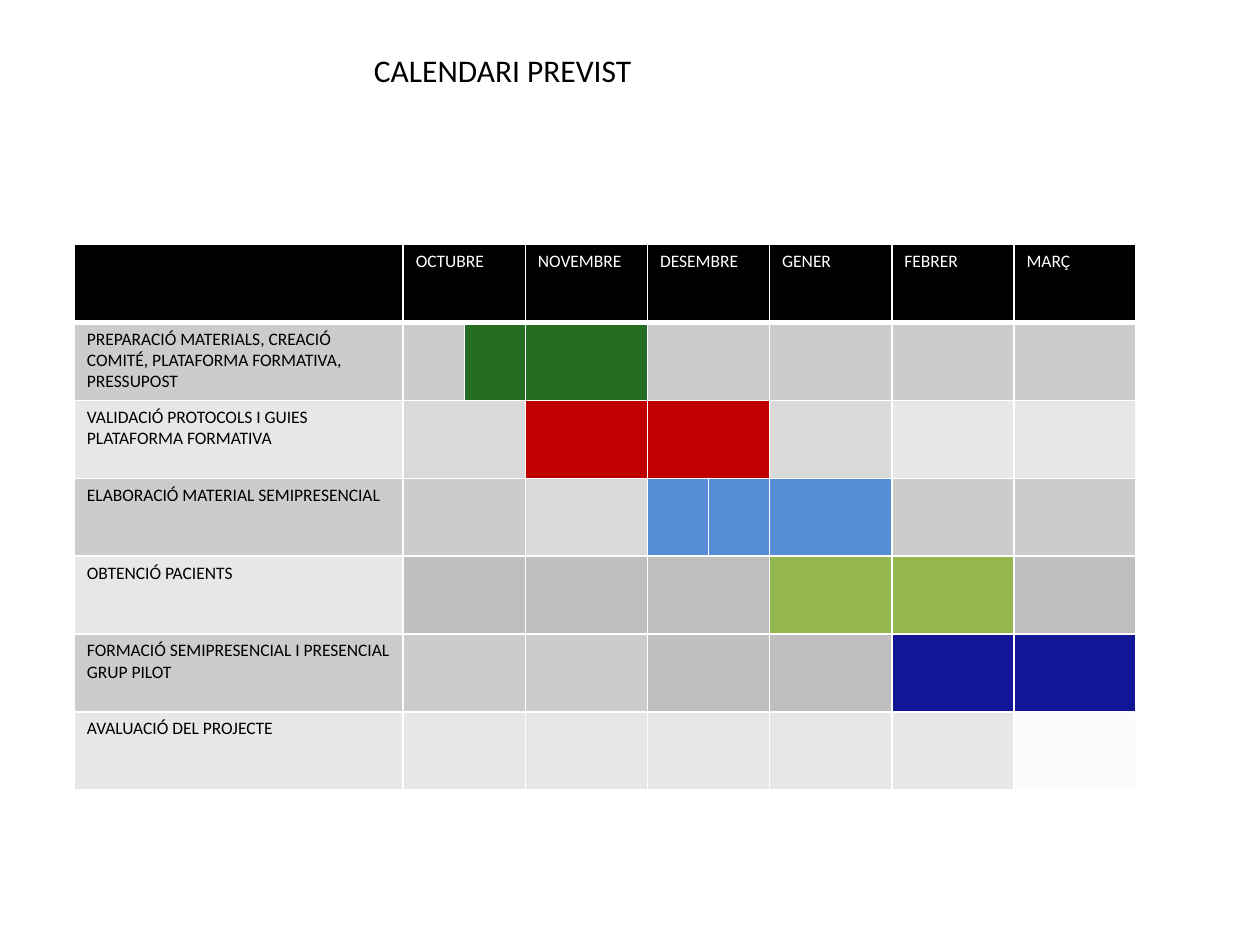
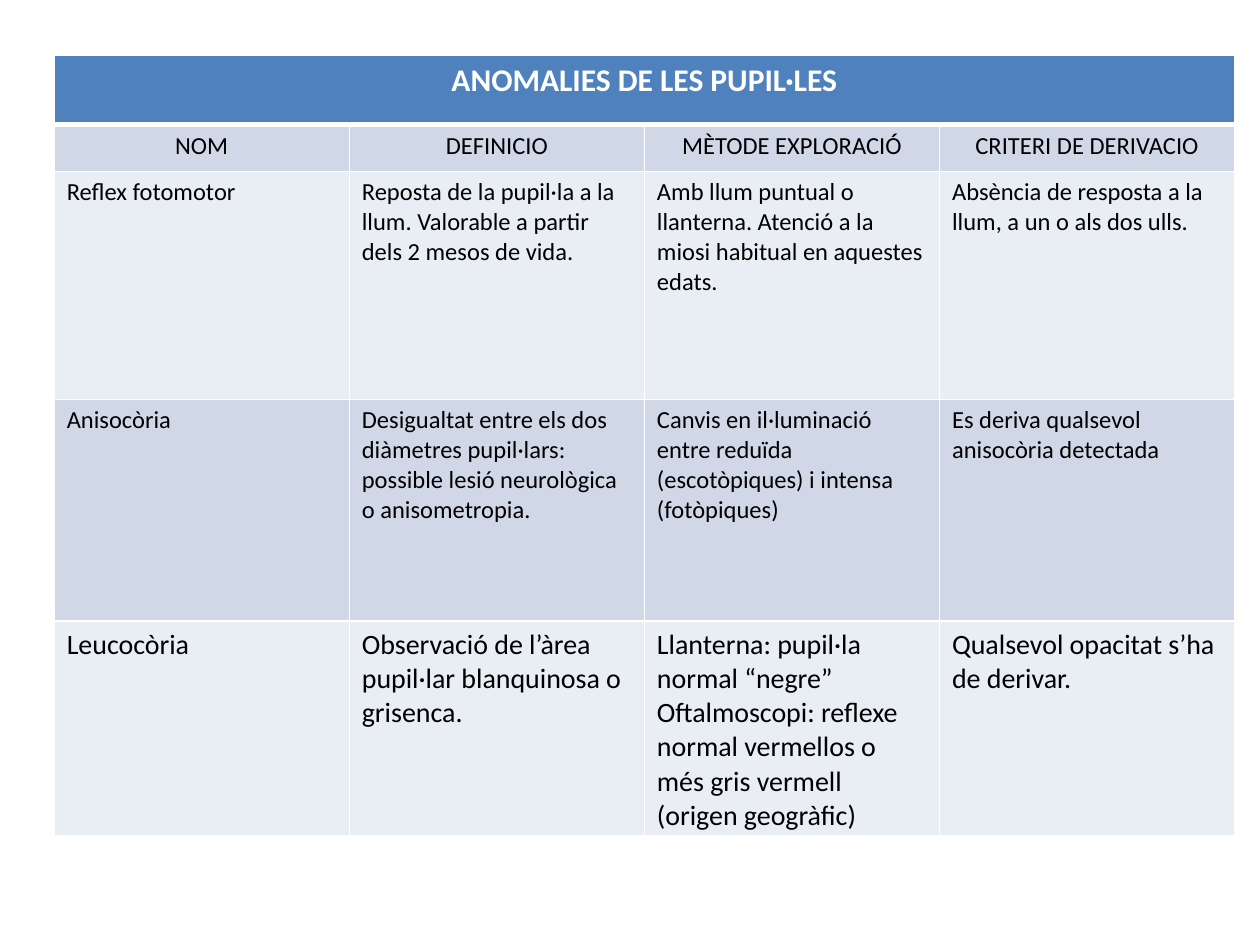
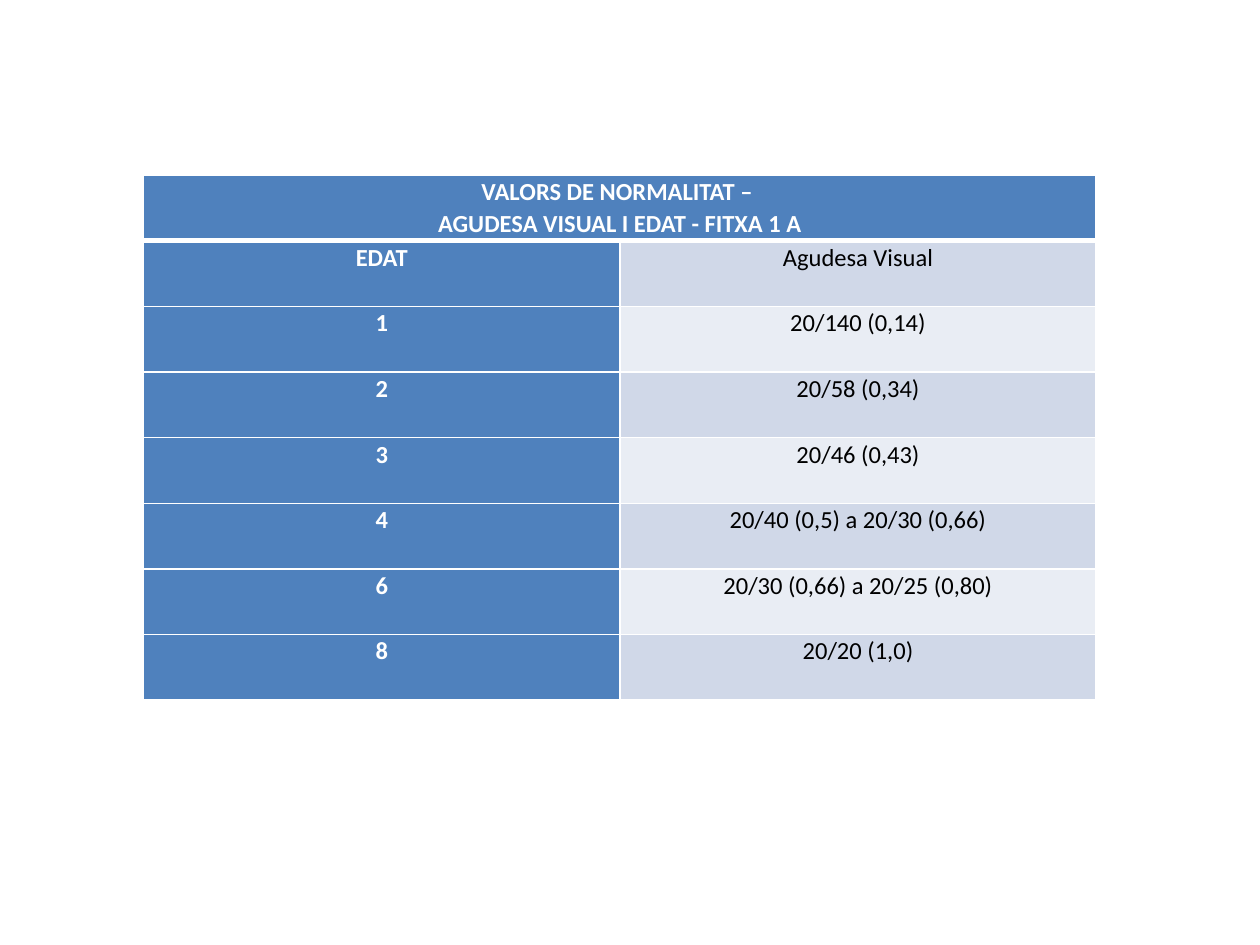
from dataclasses import dataclass
from lxml.etree import SubElement
from pptx import Presentation
from pptx.dml.color import RGBColor as Rgb
from pptx.enum.text import MSO_AUTO_SIZE as AutoSize, PP_ALIGN as Align
from pptx.oxml.ns import qn
from pptx.util import Inches, Pt


@dataclass(frozen=True)
class Theme:
    font: str = "Calibri"
    black: str = "000000"
    white: str = "FFFFFF"
    blue: str = "4F81BD"
    bands: tuple = ("D0D8E8", "E9EDF4")
    grays: tuple = ("CCCCCC", "E7E7E7")
    title: int = 18
    large: int = 16
    body: int = 14
    small: int = 10
    line: int = 1
    heavy_line: int = 3


@dataclass
class Cell:
    text: str = ""
    fill: str = Theme.white
    color: str = Theme.black
    size: int = Theme.body
    bold: bool = False
    align: Align = Align.LEFT
    span: int = 1


class Deck:
    columns, rows = 100, 75

    def __init__(self, theme):
        self.theme = theme
        self.show = Presentation()
        self.show.slide_width, self.show.slide_height = Inches(10), Inches(7.5)

    def new_slide(self):
        self.slide = self.show.slides.add_slide(self.show.slide_layouts[6])

    def x(self, columns):
        return round(self.show.slide_width * columns / self.columns)

    def y(self, rows):
        return round(self.show.slide_height * rows / self.rows)

    def apply(self, target, values):
        for key, value in values.items():
            setattr(target, key, value)

    def set_text(self, frame, cell, spacing=None):
        for index, line in enumerate(cell.text.split("\n")):
            paragraph = frame.add_paragraph() if index else frame.paragraphs[0]
            self.apply(paragraph, {"alignment": cell.align, "line_spacing": spacing})
            run = paragraph.add_run()
            run.text = line
            self.apply(run.font, {"name": self.theme.font, "size": Pt(cell.size), "bold": cell.bold})
            run.font.color.rgb = Rgb.from_string(cell.color)

    def text(self, left, top, width, height, content):
        frame = self.slide.shapes.add_textbox(
            self.x(left), self.y(top), self.x(width), self.y(height)).text_frame
        self.apply(frame, {"word_wrap": True, "auto_size": AutoSize.SHAPE_TO_FIT_TEXT})
        self.set_text(frame, content)

    def borders(self, cell, top, bottom):
        properties = cell._tc.get_or_add_tcPr()
        widths = {"a:lnL": self.theme.line, "a:lnR": self.theme.line, "a:lnT": top, "a:lnB": bottom}
        for position, (side, width) in enumerate(widths.items()):
            line = SubElement(properties, qn(side), w=str(Pt(width)))
            properties.insert(position, line)
            SubElement(SubElement(line, qn("a:solidFill")), qn("a:srgbClr"), val=self.theme.white)

    def table(self, left, top, widths, heights, content, rule=Theme.heavy_line,
              insets=(1, 0.5), spacing=None, frame_height=None):
        frame = self.slide.shapes.add_table(
            len(heights), len(widths), self.x(left), self.y(top),
            self.x(sum(widths)), self.y(sum(heights)))
        table = frame.table
        self.apply(table, {"first_row": False, "horz_banding": False})
        for column, width in zip(table.columns, widths):
            column.width = self.x(width)
        for row, height in zip(table.rows, heights):
            row.height = self.y(height)
        if frame_height:
            frame.height = self.y(frame_height)
        side, end = self.x(insets[0]), self.y(insets[1])
        margins = {"margin_left": side, "margin_right": side, "margin_top": end, "margin_bottom": end}
        line, heavy = self.theme.line, self.theme.heavy_line
        for r, entries in enumerate(content):
            c = 0
            for entry in entries:
                for part in range(c, c + entry.span):
                    cell = table.cell(r, part)
                    self.apply(cell, margins)
                    cell.fill.solid()
                    cell.fill.fore_color.rgb = Rgb.from_string(entry.fill)
                    self.borders(cell, rule if r == 1 else line, line if r else heavy)
                first = table.cell(r, c)
                if entry.span > 1:
                    first.merge(table.cell(r, c + entry.span - 1))
                if entry.text:
                    self.set_text(first.text_frame, entry, spacing)
                c += entry.span


def calendar(deck):
    theme = deck.theme
    colors = {"c": theme.grays[0], "e": theme.grays[1], "d": "D9D9D9", "b": "BFBFBF", "G": "266C22",
              "R": "C00000", "S": "558ED5", "L": "95B74F", "N": "121596", "W": "FCFBF9"}
    months = ["OCTUBRE", "NOVEMBRE", "DESEMBRE", "GENER", "FEBRER", "MARÇ"]
    halved_months = (0, 2)
    tasks = [
        ("PREPARACIÓ MATERIALS, CREACIÓ COMITÉ, PLATAFORMA FORMATIVA,\nPRESSUPOST", "cG G c c c c"),
        ("VALIDACIÓ PROTOCOLS I GUIES\nPLATAFORMA FORMATIVA", "d R R d e e"),
        ("ELABORACIÓ MATERIAL SEMIPRESENCIAL", "c d SS S c c"),
        ("OBTENCIÓ PACIENTS", "b b b L L b"),
        ("FORMACIÓ SEMIPRESENCIAL I PRESENCIAL GRUP PILOT", "c c b b N N"),
        ("AVALUACIÓ DEL PROJECTE", "e e e e e W"),
    ]
    spans = [2 if month in halved_months else 1 for month in range(len(months))]
    content = [[Cell(fill=theme.black)] + [
        Cell(month, theme.black, theme.white, theme.small, span=span)
        for month, span in zip(months, spans)]]
    for index, (task, plan) in enumerate(tasks):
        row = [Cell(task, theme.grays[index % 2], size=theme.small)]
        for codes, span in zip(plan.split(), spans):
            row += [Cell(fill=colors[code], span=span // len(codes)) for code in codes]
        content.append(row)
    month_width = 9.7
    widths = [26.1] + [month_width / span for span in spans for _ in range(span)]
    deck.new_slide()
    deck.table(5.9, 19.4, widths, [43.3 / 7] * 7, content, rule=theme.line)
    deck.text(28.7, 3.6, 35.4, 4, Cell("CALENDARI PREVIST", size=theme.title))


def pupil_anomalies(deck):
    theme = deck.theme
    headings = ["NOM", "DEFINICIO", "MÈTODE EXPLORACIÓ", "CRITERI DE DERIVACIO"]
    anomalies = [
        ["Reflex fotomotor",
         "Reposta de la pupil·la a la llum. Valorable a partir dels 2 mesos de vida.",
         "Amb llum puntual o llanterna. Atenció a la miosi habitual en aquestes edats.",
         "Absència de resposta a la llum, a un o als dos ulls."],
        ["Anisocòria",
         "Desigualtat entre els dos diàmetres pupil·lars: possible lesió neurològica o anisometropia.",
         "Canvis en il·luminació entre reduïda (escotòpiques) i intensa (fotòpiques)",
         "Es deriva qualsevol anisocòria detectada"],
        ["Leucocòria",
         "Observació de l’àrea pupil·lar blanquinosa o grisenca.",
         "Llanterna: pupil·la normal “negre”\n"
         "Oftalmoscopi: reflexe normal vermellos o més gris vermell (origen geogràfic)",
         "Qualsevol opacitat s’ha de derivar."],
    ]
    content = [
        [Cell("ANOMALIES DE LES PUPIL·LES", theme.blue, theme.white, theme.title, True, Align.CENTER, 4)],
        [Cell(heading, theme.bands[0], align=Align.CENTER) for heading in headings],
    ]
    sizes = (theme.body, theme.body, theme.large)
    for index, (anomaly, size) in enumerate(zip(anomalies, sizes), 1):
        content.append([Cell(text, theme.bands[index % 2], size=size) for text in anomaly])
    deck.new_slide()
    deck.table(4.3, 4.4, [93.7 / 4] * 4, [5.5, 3.7, 18.1, 17.6, 12.8], content, frame_height=61.9)


def visual_acuity(deck):
    theme = deck.theme
    acuity_by_age = {
        "EDAT": "Agudesa Visual",
        "1": "20/140 (0,14)",
        "2": "20/58 (0,34)",
        "3": "20/46 (0,43)",
        "4": "20/40 (0,5) a 20/30 (0,66)",
        "6": "20/30 (0,66) a 20/25 (0,80)",
        "8": "20/20 (1,0)",
    }
    heading = {"fill": theme.blue, "color": theme.white, "bold": True, "align": Align.CENTER}
    content = [[Cell("VALORS DE NORMALITAT – \nAGUDESA VISUAL I EDAT - FITXA 1 A", span=2, **heading)]]
    for index, (age, acuity) in enumerate(acuity_by_age.items()):
        content.append([Cell(age, **heading),
                        Cell(acuity, theme.bands[index % 2], align=Align.CENTER)])
    deck.new_slide()
    deck.table(11.4, 13.9, [37.8] * 2, [41.7 / 8] * 8, content, insets=(0.7, 0), spacing=1.07)


def main():
    deck = Deck(Theme())
    calendar(deck)
    pupil_anomalies(deck)
    visual_acuity(deck)
    deck.show.save("out.pptx")


if __name__ == "__main__":
    main()
